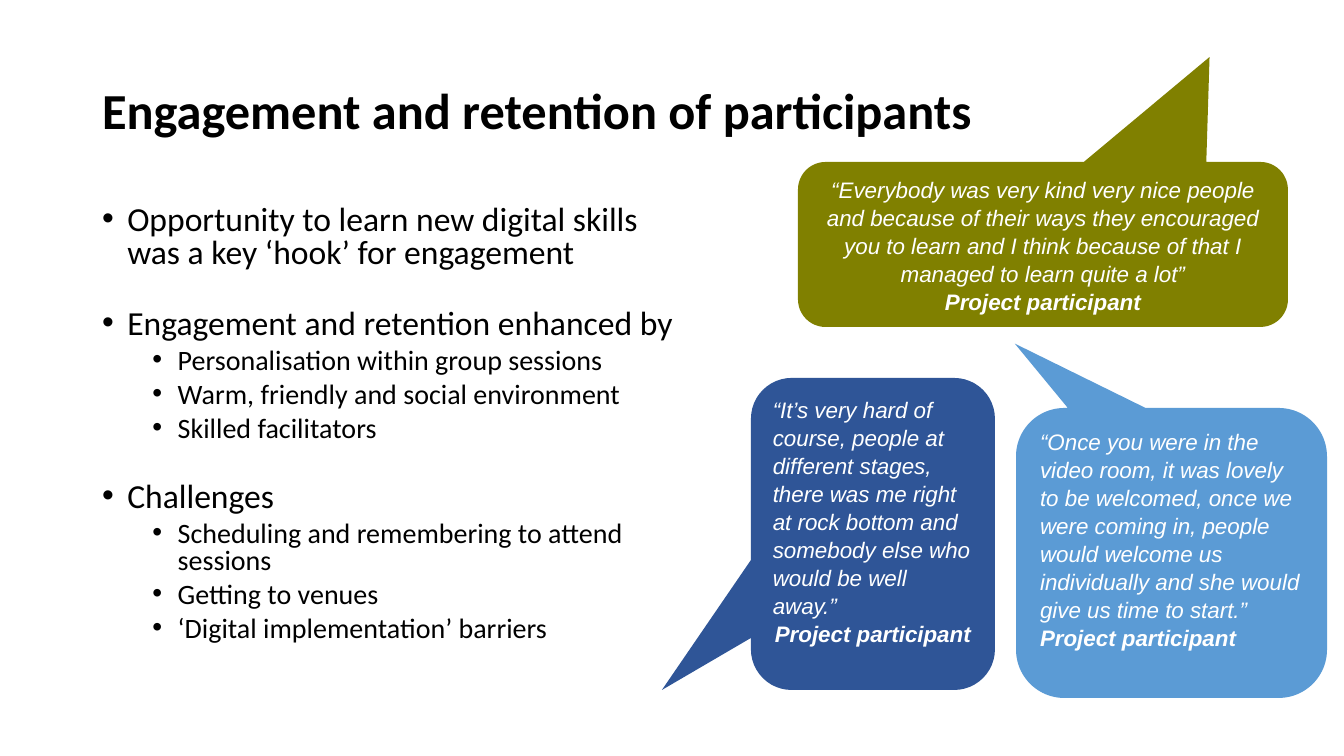
"""Build the slide on engagement and retention of participants."""
from dataclasses import dataclass

from lxml.etree import SubElement
from pptx import Presentation
from pptx.dml.color import RGBColor
from pptx.enum.shapes import MSO_SHAPE
from pptx.enum.text import MSO_ANCHOR, MSO_AUTO_SIZE, PP_ALIGN
from pptx.oxml.ns import qn
from pptx.util import Emu, Pt

TITLE = "Engagement and retention of participants"
TITLE_BOX = (92, 40, 1159, 146)
POINTS_BOX = (92, 201, 604, 480)
POINTS = [
    ("Opportunity to learn new digital skills was a key ‘hook’ for engagement", []),
    ("Engagement and retention enhanced by", [
        "Personalisation within group sessions",
        "Warm, friendly and social environment",
        "Skilled facilitators",
    ]),
    ("Challenges", [
        "Scheduling and remembering to attend sessions",
        "Getting to venues",
        "‘Digital implementation’ barriers",
    ]),
]
SPEAKER = "Project participant"
QUOTES = [
    dict(
        words="“Once you were in the video room, it was lovely to be welcomed, once we "
              "were coming in, people would welcome us individually and she would give "
              "us time to start.”",
        box=(1016, 408, 311, 290), tail=(-0.504, -0.722), color="sky",
        aligns=(PP_ALIGN.LEFT, PP_ALIGN.LEFT)),
    dict(
        words="“Everybody was very kind very nice people and because of their ways they "
              "encouraged you to learn and I think because of that I managed to learn "
              "quite a lot”",
        box=(798, 162, 490, 165), tail=(0.34, -1.136), color="olive",
        aligns=(PP_ALIGN.CENTER, PP_ALIGN.CENTER)),
    dict(
        words="“It’s very hard of course, people at different stages, there was me right "
              "at rock bottom and somebody else who would be well away.”",
        box=(751, 378, 244, 312), tail=(-0.865, 0.5), color="navy",
        aligns=(PP_ALIGN.LEFT, PP_ALIGN.CENTER)),
]


@dataclass(frozen=True)
class Theme:
    """Colours, fonts and type sizes of the slide."""
    black: RGBColor = RGBColor(0, 0, 0)
    white: RGBColor = RGBColor(255, 255, 255)
    sky: RGBColor = RGBColor.from_string("5B9BD5")
    olive: RGBColor = RGBColor.from_string("808000")
    navy: RGBColor = RGBColor.from_string("2F5597")
    main_font: str = "Calibri"
    quote_font: str = "Arial"
    title: Pt = Pt(36)
    levels: tuple = (Pt(24), Pt(20))
    quote: Pt = Pt(16)


THEME = Theme()
FIRST_GAP, SECTION_GAP, SUBPOINT_GAP = Pt(10), Pt(28), Pt(5)


def px(length):
    """Turn pixels into EMU."""
    return Emu(round(length * 914400 / 100.8))


def apply(target, **values):
    """Set attributes from a dict of values."""
    for key, value in values.items():
        setattr(target, key, value)


def place(holder, box):
    """Move a placeholder to a box in pixels."""
    apply(holder, **dict(zip(("left", "top", "width", "height"), map(px, box))))


def write(frame, index, words, color, layout, **font):
    """Write one paragraph with one run."""
    paragraph = frame.paragraphs[0] if index == 0 else frame.add_paragraph()
    apply(paragraph, **layout)
    run = paragraph.add_run()
    run.text = words
    apply(run.font, **font)
    run.font.color.rgb = color
    return paragraph


def add_bullet(paragraph, indent):
    """Give a paragraph a hanging round bullet."""
    properties = paragraph._p.get_or_add_pPr()
    properties.set("marL", str(indent))
    properties.set("indent", "-228600")
    SubElement(properties, qn("a:buFont"), typeface="Arial")
    SubElement(properties, qn("a:buChar"), char="•")


def add_title(slide):
    """Fill the title placeholder."""
    place(slide.shapes.title, TITLE_BOX)
    frame = slide.shapes.title.text_frame
    apply(frame, word_wrap=True, auto_size=MSO_AUTO_SIZE.NONE,
          vertical_anchor=MSO_ANCHOR.MIDDLE)
    write(frame, 0, TITLE, THEME.black,
          dict(alignment=PP_ALIGN.LEFT, line_spacing=0.9),
          name=THEME.main_font, size=THEME.title, bold=True)


def add_points(slide):
    """Fill the body placeholder with the two-level list."""
    body = slide.placeholders[1]
    place(body, POINTS_BOX)
    frame = body.text_frame
    apply(frame, word_wrap=True, auto_size=MSO_AUTO_SIZE.NONE,
          vertical_anchor=MSO_ANCHOR.TOP)
    lines = []
    for point, subpoints in POINTS:
        lines.append((0, point, SECTION_GAP if lines else FIRST_GAP))
        lines += [(1, subpoint, SUBPOINT_GAP) for subpoint in subpoints]
    for index, (level, words, gap) in enumerate(lines):
        paragraph = write(
            frame, index, words, THEME.black,
            dict(level=level, line_spacing=0.8, space_before=gap, space_after=Pt(0)),
            name=THEME.main_font, size=THEME.levels[level])
        add_bullet(paragraph, 228600 + level * 457200)


def add_quote(slide, words, box, tail, color, aligns):
    """Draw one speech callout."""
    callout = slide.shapes.add_shape(
        MSO_SHAPE.ROUNDED_RECTANGULAR_CALLOUT, *map(px, box))
    for index, value in enumerate(tail):
        callout.adjustments[index] = value
    callout.shadow.inherit = False
    callout.fill.solid()
    callout.fill.fore_color.rgb = getattr(THEME, color)
    callout.line.fill.background()
    frame = callout.text_frame
    apply(frame, word_wrap=True, vertical_anchor=MSO_ANCHOR.TOP)
    for index, (line, align) in enumerate(zip((words, SPEAKER), aligns)):
        write(frame, index, line, THEME.white,
              dict(alignment=align, line_spacing=Pt(20)),
              name=THEME.quote_font, size=THEME.quote, italic=True, bold=index == 1)


def main():
    """Build and save the slide."""
    deck = Presentation()
    apply(deck, slide_width=px(1344), slide_height=px(756))
    slide = deck.slides.add_slide(deck.slide_layouts[1])
    add_title(slide)
    add_points(slide)
    for quote in QUOTES:
        add_quote(slide, **quote)
    deck.save("out.pptx")


if __name__ == "__main__":
    main()
